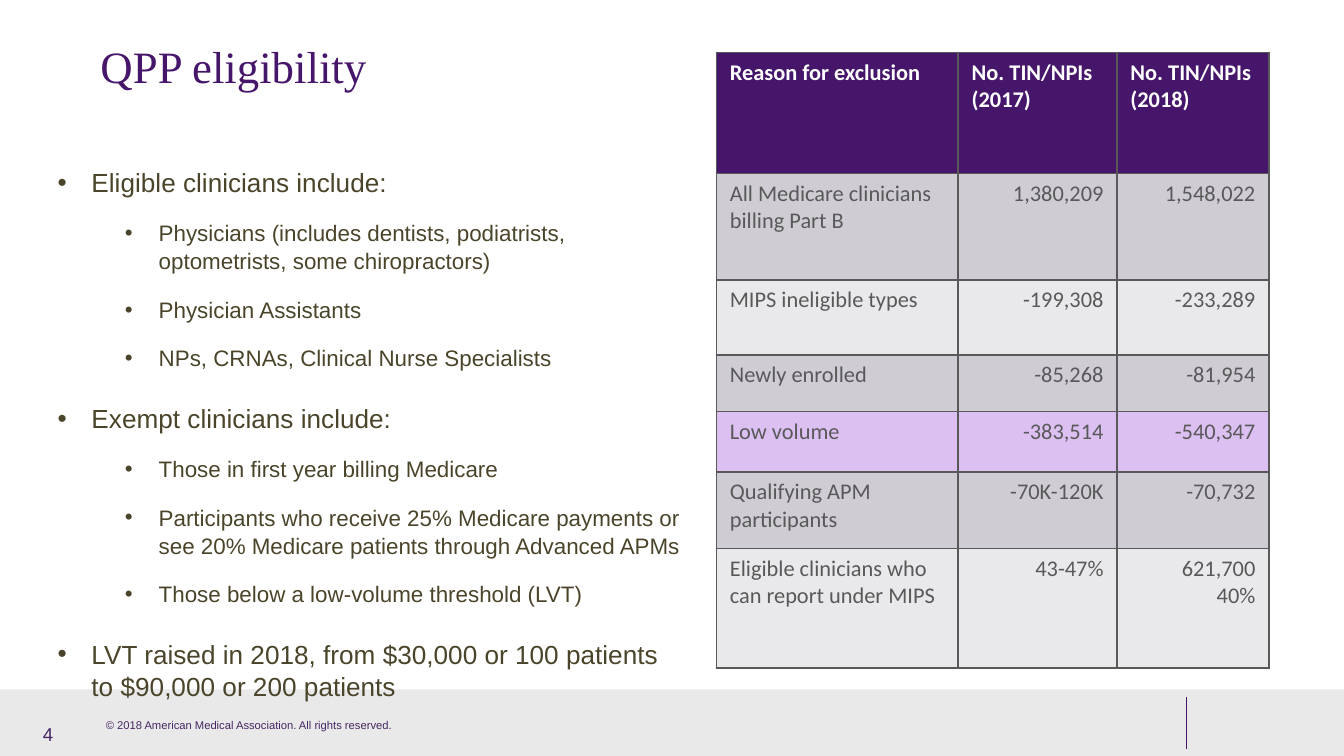
"""Build the QPP eligibility slide with its bullets and exclusion table."""
from lxml import etree
from pptx import Presentation
from pptx.dml.color import RGBColor
from pptx.enum import shapes, text
from pptx.oxml import ns
from pptx.util import Cm, Pt


def tint(code):
    return RGBColor.from_string(code)


def write(para, words, **form):
    para.text = words
    font = para.font
    font.color.rgb = tint(form.pop("color"))
    for key, value in form.items():
        setattr(font, key, value)


deck = Presentation()
deck.slide_width, deck.slide_height = Cm(25.4), Cm(14.29)
slide = deck.slides.add_slide(deck.slide_layouts[6])
pool = slide.shapes

band = pool.add_shape(shapes.MSO_SHAPE.RECTANGLE, 0, Cm(13.03), Cm(25.4), Cm(1.26))
band.shadow.inherit = False
band.fill.solid()
band.fill.fore_color.rgb = tint("E0E0E0")
band.line.fill.background()
shade = band.fill._xPr.find(".//" + ns.qn("a:srgbClr"))
etree.SubElement(shade, ns.qn("a:alpha"), val="70000")

rule = pool.add_connector(shapes.MSO_CONNECTOR.STRAIGHT, Cm(22.43), Cm(13.18), Cm(22.43), Cm(14.15))
rule.line.color.rgb = tint("46166B")
rule.line.width = Pt(0.5)
etree.SubElement(rule._element.spPr, ns.qn("a:effectLst"))

middle = text.MSO_ANCHOR.MIDDLE
labels = [
    ("© 2018 American Medical Association. All rights reserved.", (1.75, 13.46, 7.01, 0.51),
     text.MSO_ANCHOR.TOP, {"size": Pt(6), "name": "Arial", "color": "452663"}),
    ("QPP eligibility", (1.65, 0, 21.89, 2.49),
     middle, {"size": Pt(24), "name": "Times New Roman", "color": "46166B"}),
    ("4", (0.56, 13.49, 2.57, 0.76),
     middle, {"size": Pt(10), "name": "Arial", "color": "452663"}),
]
for words, place, anchor, form in labels:
    frame = pool.add_textbox(*map(Cm, place)).text_frame
    frame.word_wrap = True
    frame.vertical_anchor = anchor
    write(frame.paragraphs[0], words, **form)

points = [
    (0, "Eligible clinicians include:"),
    (1, "Physicians (includes dentists, podiatrists, optometrists, some chiropractors)"),
    (1, "Physician Assistants"),
    (1, "NPs, CRNAs, Clinical Nurse Specialists"),
    (0, "Exempt clinicians include:"),
    (1, "Those in first year billing Medicare"),
    (1, "Participants who receive 25% Medicare payments or see 20% Medicare patients through Advanced APMs"),
    (1, "Those below a low-volume threshold (LVT)"),
    (0, "LVT raised in 2018, from $30,000 or 100 patients to $90,000 or 200 patients"),
]
levels = [
    {"left": 0.64, "size": 14, "before": 10},
    {"left": 1.91, "size": 12, "before": 5},
]
body = pool.add_textbox(Cm(0.84), Cm(3), Cm(12.4), Cm(9.63)).text_frame
body.word_wrap = True
for i, (level, words) in enumerate(points):
    look = levels[level]
    para = body.add_paragraph() if i else body.paragraphs[0]
    para.level = level
    para.line_spacing = 1.04
    para.space_before = Pt(look["before"] if i else 0)
    para.space_after = Pt(6)
    props = para._p.get_or_add_pPr()
    props.set("marL", str(Cm(look["left"])))
    props.set("indent", str(-Cm(0.64)))
    etree.SubElement(props, ns.qn("a:buFont"), typeface="Arial")
    etree.SubElement(props, ns.qn("a:buChar"), char="•")
    write(para, words, size=Pt(look["size"]), name="Arial", color="4A452A")

dark, light = "CFCCD4", "E9E8EB"
rows = [
    (2.29, "46166B", "Reason for exclusion", "No. TIN/NPIs (2017)", "No. TIN/NPIs (2018)"),
    (2.01, dark, "All Medicare clinicians billing Part B", "1,380,209", "1,548,022"),
    (1.42, light, "MIPS ineligible types", "-199,308", "-233,289"),
    (1.07, dark, "Newly enrolled", "-85,268", "-81,954"),
    (1.14, "DCC0F2", "Low volume", "-383,514", "-540,347"),
    (1.45, dark, "Qualifying APM participants", "-70K-120K", "-70,732"),
    (2.26, light, "Eligible clinicians who can report under MIPS", "43-47%", "621,700\n40%"),
]
widths = [4.57, 3, 2.87]
high = sum(row[0] for row in rows)
grid = pool.add_table(len(rows), 3, Cm(13.54), Cm(0.99), Cm(sum(widths)), Cm(high)).table
for col, width in zip(grid.columns, widths):
    col.width = Cm(width)
for r, (tall, fill, *cells) in enumerate(rows):
    grid.rows[r].height = Cm(tall)
    for c, words in enumerate(cells):
        cell = grid.cell(r, c)
        cell.text = words
        for para in cell.text_frame.paragraphs:
            if r and c:
                para.alignment = text.PP_ALIGN.RIGHT
            write(para, para.text, size=Pt(12), name="Calibri", bold=r == 0,
                  color="595959" if r else "FFFFFF")
        props = cell._tc.get_or_add_tcPr()
        for side in ("lnL", "lnR", "lnT", "lnB"):
            edge = etree.SubElement(props, ns.qn("a:" + side), w=str(Pt(1)))
            solid = etree.SubElement(edge, ns.qn("a:solidFill"))
            etree.SubElement(solid, ns.qn("a:srgbClr"), val="595959")
        cell.fill.solid()
        cell.fill.fore_color.rgb = tint(fill)

deck.save("out.pptx")
